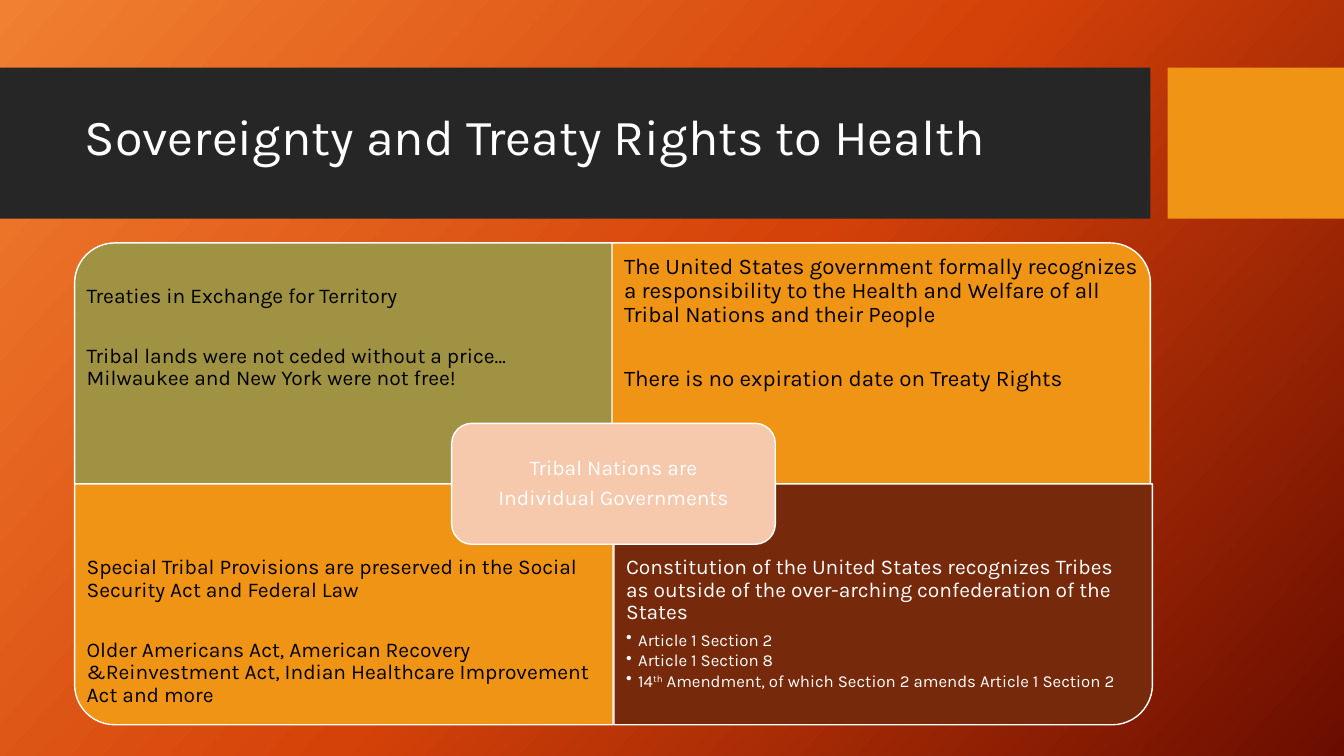
from lxml import etree
from pptx import Presentation
from pptx.dml.color import RGBColor
from pptx.enum.shapes import MSO_SHAPE
from pptx.enum.text import MSO_ANCHOR, MSO_AUTO_SIZE, PP_ALIGN
from pptx.oxml import parse_xml
from pptx.oxml.ns import nsdecls, qn
from pptx.util import Inches, Pt

RECTANGLE = MSO_SHAPE.RECTANGLE
ONE_ROUND_CORNER = MSO_SHAPE.ROUND_1_RECTANGLE
ROUNDED = MSO_SHAPE.ROUNDED_RECTANGLE
TOP, MIDDLE = MSO_ANCHOR.TOP, MSO_ANCHOR.MIDDLE
LEFT, CENTER = PP_ALIGN.LEFT, PP_ALIGN.CENTER
NO_AUTO_SIZE = MSO_AUTO_SIZE.NONE

FONT = "Karla"
WHITE, BLACK, ORANGE = "FFFFFF", "000000", "F09415"
TILE_WIDTH, TILE_HEIGHT, TEXT_HEIGHT = 5.34, 2.39, 1.79
TILE_LEFT, TILE_TOP = 0.74, 2.41
INSET = 0.12


def color(value):
    return RGBColor.from_string(value)


def set_gradient_background(slide, stops, angle):
    stop_xml = "".join(
        f'<a:gs pos="{percent * 1000}"><a:srgbClr val="{value}"/></a:gs>'
        for percent, value in stops)
    background = parse_xml(
        f'<p:bg {nsdecls("p", "a")}><p:bgPr><a:gradFill rotWithShape="1">'
        f'<a:gsLst>{stop_xml}</a:gsLst><a:lin ang="{angle * 60000}" scaled="0"/>'
        '</a:gradFill><a:effectLst/></p:bgPr></p:bg>')
    slide.element.cSld.insert(0, background)


def add_block(slide, kind, left, top, width, height, fill, outline=None):
    shape = slide.shapes.add_shape(
        kind, Inches(left), Inches(top), Inches(width), Inches(height))
    shape.shadow.inherit = False
    shape.fill.solid()
    shape.fill.fore_color.rgb = color(fill)
    if outline:
        shape.line.color.rgb = color(outline)
        shape.line.width = Pt(1)
    else:
        shape.line.fill.background()
    return shape


def add_tile(slide, left, top, rotation, fill):
    """Add a quadrant whose rounded corner is turned to face outwards."""
    width, height = TILE_WIDTH, TILE_HEIGHT
    if rotation % 180:
        shift = (width - height) / 2
        left, top = left + shift, top - shift
        width, height = height, width
    tile = add_block(slide, ONE_ROUND_CORNER, left, top, width, height, fill, WHITE)
    tile.rotation = rotation


def set_frame(frame, anchor, inset=INSET, top_inset=INSET):
    frame.word_wrap = True
    frame.auto_size = NO_AUTO_SIZE
    frame.vertical_anchor = anchor
    frame.margin_left = frame.margin_right = frame.margin_bottom = Inches(inset)
    frame.margin_top = Inches(top_inset)


def format_paragraph(paragraph, size, text_color, space_after=0, alignment=LEFT):
    paragraph.alignment = alignment
    paragraph.line_spacing = 0.9
    paragraph.space_before = Pt(0)
    paragraph.space_after = Pt(space_after)
    paragraph.font.size = Pt(size)
    paragraph.font.name = FONT
    paragraph.font.color.rgb = color(text_color)


def write_lines(frame, lines, size, text_color, space_after, alignment=LEFT):
    for index, line in enumerate(lines):
        paragraph = frame.paragraphs[0] if index == 0 else frame.add_paragraph()
        paragraph.text = line
        format_paragraph(paragraph, size, text_color, space_after, alignment)


def add_tile_text(slide, left, top, lines, size, text_color, gap, top_inset=INSET):
    box = slide.shapes.add_textbox(
        Inches(left), Inches(top), Inches(TILE_WIDTH), Inches(TEXT_HEIGHT))
    set_frame(box.text_frame, TOP, top_inset=top_inset)
    write_lines(box.text_frame, lines, size, text_color, gap)
    return box.text_frame


def add_bullet(frame, pieces):
    """Add a bulleted paragraph; pieces are (text, is_superscript) pairs."""
    paragraph = frame.add_paragraph()
    paragraph.level = 1
    for text, is_superscript in pieces:
        run = paragraph.add_run()
        run.text = text
        if is_superscript:
            run.font._element.set("baseline", "30000")
    properties = paragraph._p.get_or_add_pPr()
    properties.set("marL", str(Inches(INSET)))
    properties.set("indent", str(-Inches(INSET)))
    etree.SubElement(properties, qn("a:buChar")).set("char", "•")
    format_paragraph(paragraph, 12, WHITE, 1.8)


def add_title(slide, text):
    title = slide.shapes.title
    title.left, title.top = Inches(0.74), Inches(0.82)
    title.width, title.height = Inches(10.51), Inches(1.18)
    slide.shapes._spTree.append(title._element)  # in front of the bars
    set_frame(title.text_frame, MIDDLE, inset=0.1, top_inset=0.05)
    write_lines(title.text_frame, [text], 36, WHITE, 0)


def main():
    presentation = Presentation()
    presentation.slide_width = Inches(13.33)
    presentation.slide_height = Inches(7.5)
    slide = presentation.slides.add_slide(presentation.slide_layouts[5])

    # Background and title band
    set_gradient_background(
        slide, [(0, "F18031"), (50, "D54209"), (100, "6A0D00")], 42)
    add_block(slide, RECTANGLE, 0, 0.67, 11.41, 1.5, "262626")
    add_block(slide, RECTANGLE, 11.58, 0.67, 1.75, 1.5, ORANGE)
    add_title(slide, "Sovereignty and Treaty Rights to Health")

    # Four quadrants
    right = TILE_LEFT + TILE_WIDTH
    bottom = TILE_TOP + TILE_HEIGHT
    bottom_text = bottom + TILE_HEIGHT - TEXT_HEIGHT

    add_tile(slide, TILE_LEFT, TILE_TOP, 270, "9F9242")
    add_tile_text(slide, TILE_LEFT, TILE_TOP, [
        "Treaties in Exchange for Territory",
        "Tribal lands were not ceded without a price… "
        "Milwaukee and New York were not free!",
    ], 15, BLACK, 26.5, top_inset=0.42)

    add_tile(slide, right - 0.01, TILE_TOP, 0, ORANGE)
    add_tile_text(slide, right - 0.01, TILE_TOP, [
        "The United States government formally recognizes a responsibility "
        "to the Health and Welfare of all Tribal Nations and their People",
        "There is no expiration date on Treaty Rights",
    ], 16, BLACK, 28.5)

    add_tile(slide, TILE_LEFT, bottom, 180, ORANGE)
    add_tile_text(slide, TILE_LEFT, bottom_text, [
        "Special Tribal Provisions are preserved in the Social Security Act "
        "and Federal Law",
        "Older Americans Act, American Recovery &Reinvestment Act, "
        "Indian Healthcare Improvement Act and more",
    ], 15, BLACK, 26.5)

    add_tile(slide, right + 0.01, bottom, 90, "76290B")
    constitution = add_tile_text(slide, right + 0.01, bottom_text, [
        "Constitution of the United States recognizes Tribes as outside "
        "of the over-arching confederation of the States",
    ], 15, WHITE, 5)
    add_bullet(constitution, [("Article 1 Section 2", False)])
    add_bullet(constitution, [("Article 1 Section 8", False)])
    add_bullet(constitution, [
        ("14", False), ("th", True),
        (" Amendment, of which Section 2 amends Article 1 Section 2", False)])

    # Central label
    label = add_block(slide, ROUNDED, 4.48, 4.2, 3.21, 1.2, "F6C8AC", WHITE)
    set_frame(label.text_frame, MIDDLE)
    write_lines(label.text_frame, ["Tribal Nations are", "Individual Governments"],
                15, WHITE, 5, CENTER)

    presentation.save("out.pptx")


if __name__ == "__main__":
    main()
